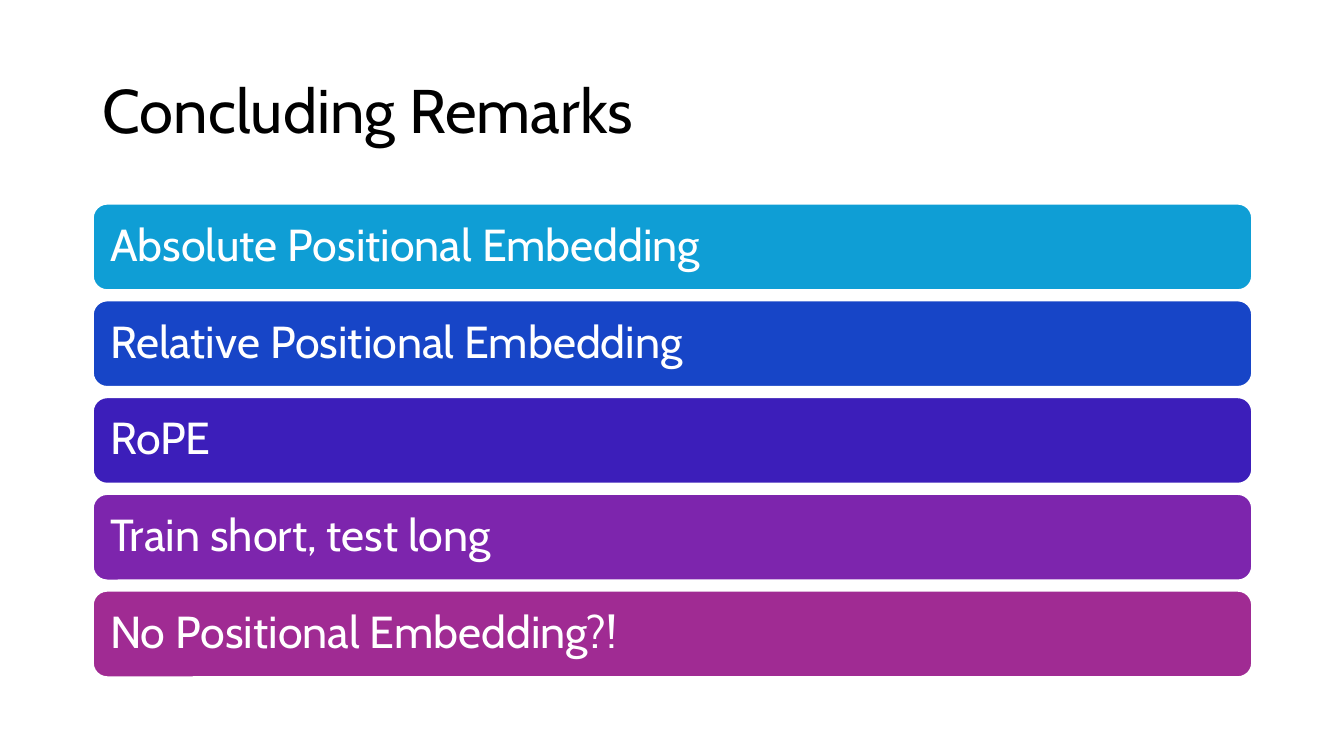
from dataclasses import dataclass

from pptx import Presentation
from pptx.dml.color import RGBColor
from pptx.enum.shapes import MSO_SHAPE
from pptx.enum.text import MSO_ANCHOR, PP_ALIGN
from pptx.util import Inches, Pt

COLORS = {
    "black": "000000",
    "white": "FFFFFF",
    "sky": "0F9ED5",
    "blue": "1745C7",
    "indigo": "3C1EBA",
    "purple": "7D25AD",
    "magenta": "A02B93",
}
FONT_NAME = "Cabin"
LEFT, WIDTH = Inches(0.92), Inches(11.5)
REMARK_TOP, REMARK_HEIGHT, REMARK_PITCH = Inches(2.02), Inches(0.86), Inches(0.96)
REMARK_MARGIN = Inches(0.13)

FRAME_FORMAT = {"word_wrap": True, "vertical_anchor": MSO_ANCHOR.MIDDLE}
REMARK_FRAME_FORMAT = FRAME_FORMAT | {
    f"margin_{side}": REMARK_MARGIN for side in ("left", "top", "right", "bottom")
}
PARAGRAPH_FORMAT = {"alignment": PP_ALIGN.LEFT, "line_spacing": 0.9}


@dataclass(frozen=True)
class Remark:
    text: str
    color: str


REMARKS = [
    Remark("Absolute Positional Embedding", "sky"),
    Remark("Relative Positional Embedding", "blue"),
    Remark("RoPE", "indigo"),
    Remark("Train short, test long", "purple"),
    Remark("No Positional Embedding?!", "magenta"),
]


def rgb(color: str) -> RGBColor:
    return RGBColor.from_string(COLORS[color])


def apply_format(target, values: dict) -> None:
    for attribute, value in values.items():
        setattr(target, attribute, value)


def write_text(shape, text: str, size: int, color: str, frame_format: dict) -> None:
    frame = shape.text_frame
    frame.text = text
    apply_format(frame, frame_format)
    paragraph = frame.paragraphs[0]
    apply_format(paragraph, PARAGRAPH_FORMAT)
    font = paragraph.runs[0].font
    apply_format(font, {"name": FONT_NAME, "size": Pt(size)})
    font.color.rgb = rgb(color)


def add_heading(slide, text: str) -> None:
    heading = slide.shapes.title
    place = {"left": LEFT, "top": Inches(0.4), "width": WIDTH, "height": Inches(1.45)}
    apply_format(heading, place)
    write_text(heading, text, 44, "black", FRAME_FORMAT)


def add_remark(slide, remark: Remark, row: int) -> None:
    top = REMARK_TOP + row * REMARK_PITCH
    bar = slide.shapes.add_shape(
        MSO_SHAPE.ROUNDED_RECTANGLE, LEFT, top, WIDTH, REMARK_HEIGHT
    )
    bar.shadow.inherit = False
    bar.fill.solid()
    bar.fill.fore_color.rgb = rgb(remark.color)
    bar.line.color.rgb = rgb("white")
    bar.line.width = Pt(1.5)
    write_text(bar, remark.text, 32, "white", REMARK_FRAME_FORMAT)


def main() -> None:
    deck = Presentation()
    apply_format(deck, {"slide_width": Inches(13.33), "slide_height": Inches(7.5)})
    slide = deck.slides.add_slide(deck.slide_layouts.get_by_name("Title Only"))
    add_heading(slide, "Concluding Remarks")
    for row, remark in enumerate(REMARKS):
        add_remark(slide, remark, row)
    deck.save("out.pptx")


if __name__ == "__main__":
    main()
